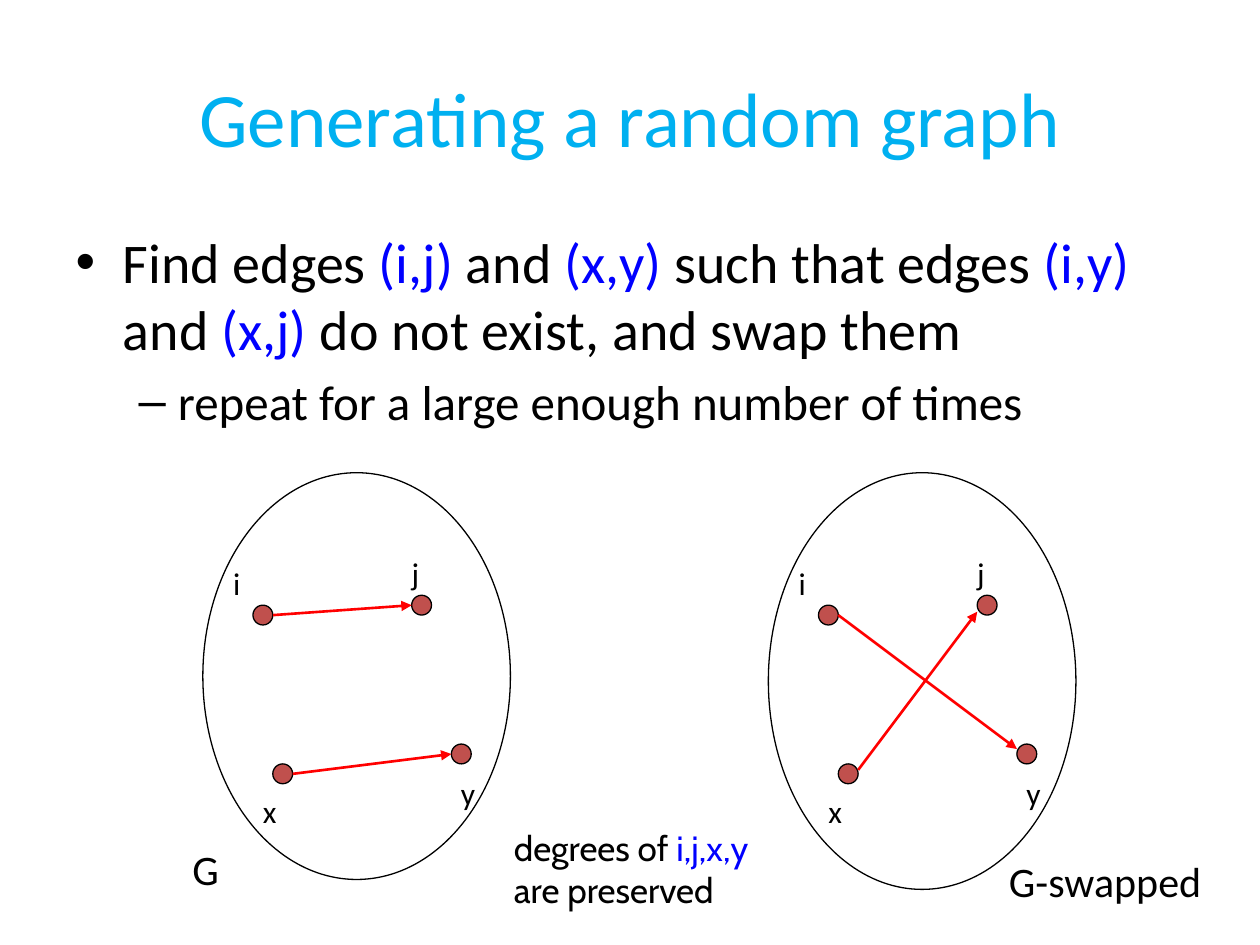
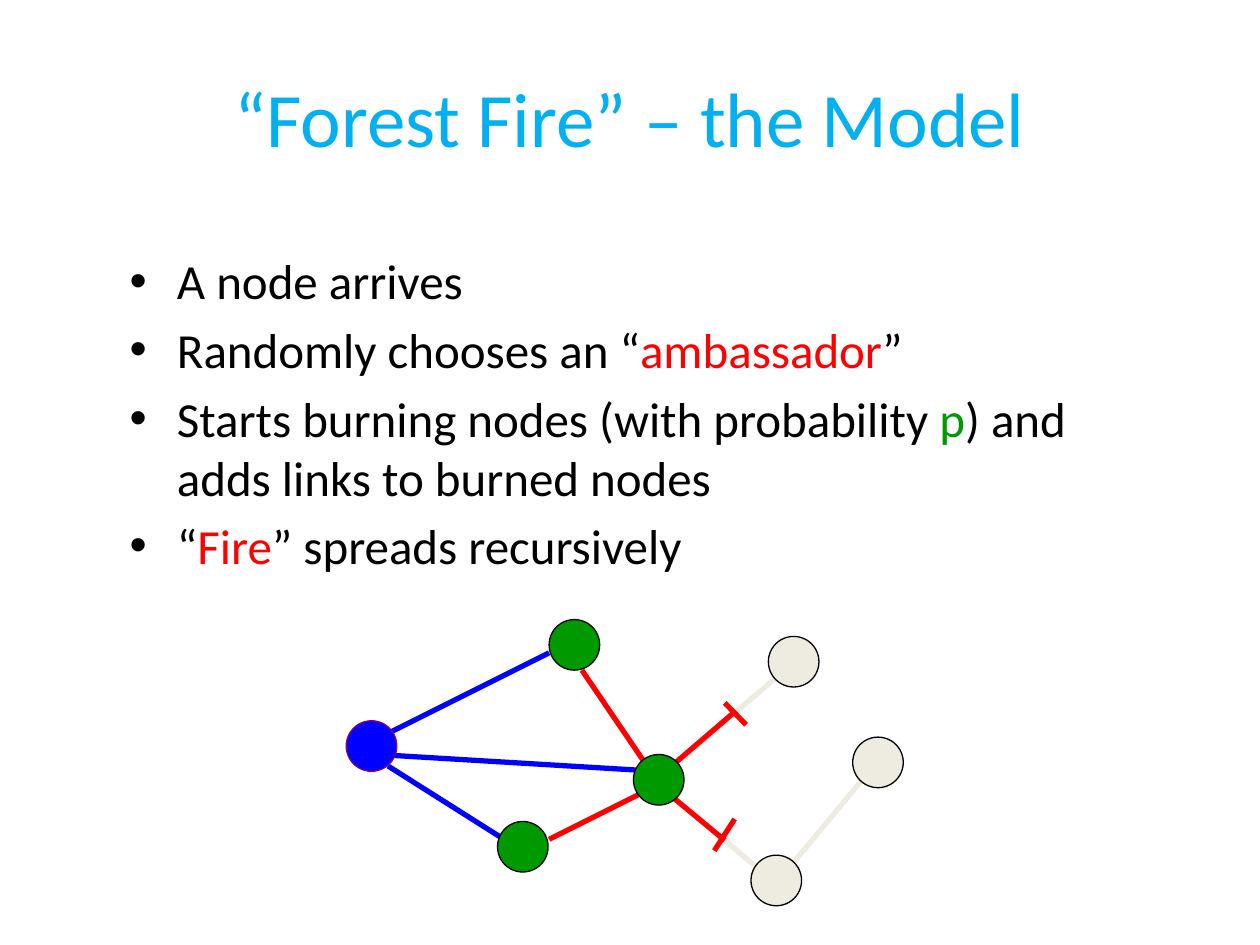
from lxml.etree import SubElement
from pptx import Presentation
from pptx.dml.color import RGBColor
from pptx.enum.shapes import MSO_CONNECTOR, MSO_SHAPE
from pptx.enum.text import MSO_ANCHOR, MSO_AUTO_SIZE, PP_ALIGN
from pptx.oxml.ns import qn
from pptx.util import Cm, Pt

# Shared colours and fonts
TITLE_BLUE = RGBColor(0x00, 0xB0, 0xF0)
BLACK = RGBColor(0x00, 0x00, 0x00)
BLUE = RGBColor(0x00, 0x00, 0xFF)
RED = RGBColor(0xFF, 0x00, 0x00)
GREEN = RGBColor(0x00, 0x99, 0x00)
BRICK = RGBColor(0xC0, 0x50, 0x4D)
PALE = RGBColor(0xEE, 0xEC, 0xE1)
PURPLE = RGBColor(0x80, 0x00, 0x80)
MAIN_FONT = "Calibri"
NOTE_FONT = "Cabin"

# Node diameters and the gap between the two graphs, in cm
SMALL_NODE = 0.4
LARGE_NODE = 1.02
GRAPH_SHIFT = 11.4

# Node name: centre and label offset from it, in cm
SWAP_NODES = {
    "i": ((5.3, 12.4), (-0.85, -1.15)),
    "j": ((8.5, 12.2), (-0.45, -1.15)),
    "x": ((5.7, 15.6), (-0.65, 0.25)),
    "y": ((9.3, 15.2), (-0.26, 0.27)),
}

# Fire edges from back to front: colour, start, end
FIRE_EDGES = [
    (PALE, (13.34, 15.88), (15.37, 17.58)),
    (PALE, (15.82, 13.51), (13.44, 15.54)),
    (PALE, (17.53, 15.54), (15.82, 17.6)),
    (RED, (14.81, 14.35), (13.54, 15.44)),
    (RED, (11.73, 13.51), (13.11, 15.54)),
    (RED, (11.07, 16.92), (13.11, 15.9)),
    (RED, (13.39, 15.93), (14.61, 16.94)),
    (BLUE, (7.82, 15.44), (10.16, 16.92)),
    (BLUE, (7.62, 15.21), (13.11, 15.54)),
    (BLUE, (7.67, 14.86), (11.07, 13.16)),
]

# Fire nodes: fill, outline, centre
FIRE_NODES = [
    (PALE, BLACK, (17.7, 15.37)),
    (PALE, BLACK, (15.65, 17.75)),
    (PALE, BLACK, (16.0, 13.34)),
    (BLUE, PURPLE, (7.49, 15.04)),
    (GREEN, BLACK, (11.58, 13.0)),
    (GREEN, BLACK, (13.28, 15.72)),
    (GREEN, BLACK, (10.54, 17.07)),
]

# Bars that stop the fire: start, end
FIRE_STOPS = [((14.61, 14.17), (15.04, 14.61)), ((14.81, 16.51), (14.4, 17.15))]


def place(shape, left, top, width, height):
    shape.left, shape.top = Cm(left), Cm(top)
    shape.width, shape.height = Cm(width), Cm(height)


def format_run(run, size, color, font=MAIN_FONT):
    run.font.name = font
    run.font.size = Pt(size)
    run.font.color.rgb = color


def write_paragraphs(text_frame, paragraphs, size, font=MAIN_FONT):
    """Each paragraph is a list of plain strings and (string, colour) pairs."""
    for index, parts in enumerate(paragraphs):
        paragraph = text_frame.add_paragraph() if index else text_frame.paragraphs[0]
        for part in parts:
            text, color = (part, BLACK) if isinstance(part, str) else part
            run = paragraph.add_run()
            run.text = text
            format_run(run, size, color, font)


def add_titled_slide(presentation, title):
    slide = presentation.slides.add_slide(presentation.slide_layouts[1])
    shape = slide.shapes.title
    place(shape, 1.27, 0.76, 22.86, 3.18)
    text_frame = shape.text_frame
    text_frame.text = title
    text_frame.vertical_anchor = MSO_ANCHOR.MIDDLE
    text_frame.auto_size = MSO_AUTO_SIZE.NONE
    paragraph = text_frame.paragraphs[0]
    paragraph.alignment = PP_ALIGN.CENTER
    format_run(paragraph.runs[0], 44, TITLE_BLUE)
    return slide


def fill_body(slide, box, paragraphs, size):
    body = slide.placeholders[1]
    place(body, *box)
    body.text_frame.auto_size = MSO_AUTO_SIZE.NONE
    write_paragraphs(body.text_frame, paragraphs, size)
    return body.text_frame


def add_label(slide, box, paragraphs, size, font=MAIN_FONT):
    label = slide.shapes.add_textbox(*(Cm(length) for length in box))
    label.text_frame.word_wrap = False
    label.text_frame.auto_size = MSO_AUTO_SIZE.SHAPE_TO_FIT_TEXT
    write_paragraphs(label.text_frame, paragraphs, size, font)


def add_ellipse(slide, box, fill=None, outline=BLACK):
    ellipse = slide.shapes.add_shape(MSO_SHAPE.OVAL, *(Cm(length) for length in box))
    ellipse.shadow.inherit = False
    if fill is None:
        ellipse.fill.background()
    else:
        ellipse.fill.solid()
        ellipse.fill.fore_color.rgb = fill
    ellipse.line.color.rgb = outline
    ellipse.line.width = Pt(0.75)


def add_node(slide, center, diameter, fill, outline=BLACK):
    x, y = center
    box = (x - diameter / 2, y - diameter / 2, diameter, diameter)
    add_ellipse(slide, box, fill, outline)


def add_edge(slide, start, end, color, width, arrow=False):
    edge = slide.shapes.add_connector(
        MSO_CONNECTOR.STRAIGHT, *(Cm(length) for length in (*start, *end)))
    edge.line.color.rgb = color
    edge.line.width = Pt(width)
    if arrow:
        SubElement(edge.line._get_or_add_ln(), qn("a:tailEnd"), type="triangle")
    SubElement(edge._element.spPr, qn("a:effectLst"))


def add_swap_graph(slide, shift, edges, height, caption, caption_box):
    """Edges are (source, target, start drop, end drop)."""
    centers = {name: (x + shift, y) for name, ((x, y), _) in SWAP_NODES.items()}
    for center in centers.values():
        add_node(slide, center, SMALL_NODE, BRICK)
    for source, target, start_drop, end_drop in edges:
        start_x, start_y = centers[source]
        end_x, end_y = centers[target]
        add_edge(slide, (start_x + SMALL_NODE / 2, start_y + start_drop),
                 (end_x - SMALL_NODE / 2, end_y + end_drop), RED, 1.5, arrow=True)
    for name, (_, (offset_x, offset_y)) in SWAP_NODES.items():
        x, y = centers[name]
        width = 0.66 if name in "ij" else 0.84
        add_label(slide, (x + offset_x, y + offset_y, width, 1.02), [[name]], 18)
    add_ellipse(slide, (4.09 + shift, 9.53, 6.2, height))
    add_label(slide, caption_box, [[caption]], 24)


def build_random_graph_slide(presentation):
    slide = add_titled_slide(presentation, "Generating a random graph")
    text_frame = fill_body(slide, (1.27, 4.45, 22.86, 12.57), [
        ["Find edges ", ("(i,j)", BLUE), " and ", ("(x,y)", BLUE),
         " such that edges ", ("(i,y)", BLUE), " and ", ("(x,j)", BLUE),
         " do not exist, and swap them"],
        ["repeat for a large enough number of times"],
    ], 32)
    detail = text_frame.paragraphs[1]
    detail.level = 1
    detail.runs[0].font.size = Pt(28)

    # Graph before and after the swap
    add_swap_graph(slide, 0, [("i", "j", 0, 0), ("x", "y", 0, 0)],
                   8.2, "G", (3.63, 16.87, 1.17, 1.27))
    add_swap_graph(slide, GRAPH_SHIFT, [("i", "y", 0, -0.1), ("x", "j", -0.08, 0.13)],
                   8.4, "G-swapped", (20.09, 17.12, 4.85, 1.27))
    add_label(slide, (10.11, 16.54, 5.72, 1.96),
              [["degrees of ", ("i,j,x,y", BLUE)], ["are preserved"]], 20, NOTE_FONT)


def build_forest_fire_slide(presentation):
    slide = add_titled_slide(presentation, "“Forest Fire” – the Model")
    fill_body(slide, (2.36, 4.93, 21.39, 8.53), [
        ["A node arrives"],
        ["Randomly chooses an “", ("ambassador", RED), "”"],
        ["Starts burning nodes (with probability ", ("p", GREEN),
         ") and adds links to burned nodes"],
        ["“", ("Fire", RED), "” spreads recursively"],
    ], 28)

    # Network with burned, new and untouched nodes
    for color, start, end in FIRE_EDGES:
        add_edge(slide, start, end, color, 3)
    for fill, outline, center in FIRE_NODES:
        add_node(slide, center, LARGE_NODE, fill, outline)
    for start, end in FIRE_STOPS:
        add_edge(slide, start, end, RED, 3)


def main():
    presentation = Presentation()
    presentation.slide_width, presentation.slide_height = Cm(25.4), Cm(19.05)
    build_random_graph_slide(presentation)
    build_forest_fire_slide(presentation)
    presentation.save("out.pptx")


if __name__ == "__main__":
    main()
